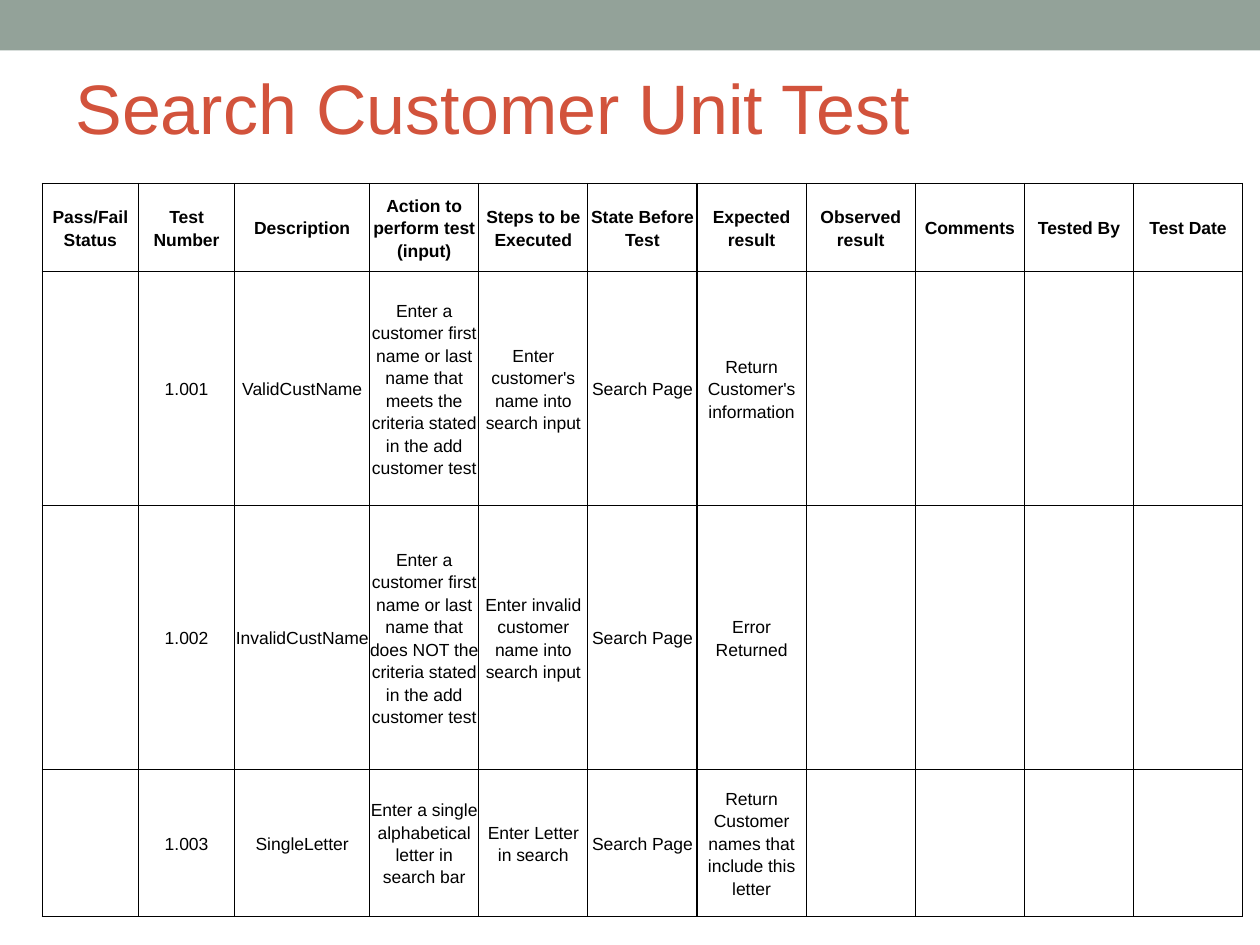
from dataclasses import dataclass

from lxml import etree
from pptx import Presentation
from pptx import util as u
from pptx.dml.color import RGBColor
from pptx.enum import shapes, text
from pptx.oxml import ns


@dataclass(frozen=True)
class Theme:
    font: str = "Arial"
    band: str = "93A299"
    title: str = "D2533C"
    ink: str = "000000"
    title_size: int = 40
    table_size: int = 10
    border: float = 0.75
    spacing: float = 1.15


class SlideBuilder:
    def __init__(self, theme, slide):
        self.theme = theme
        self.slide = slide

    def add_span(self, para, words, size, color, bold=False):
        span = para.add_run()
        span.text = words
        span.font.name = self.theme.font
        span.font.size = u.Pt(size)
        span.font.bold = bold
        span.font.color.rgb = RGBColor.from_string(color)

    def band(self, width, height):
        box = self.slide.shapes.add_shape(
            shapes.MSO_SHAPE.RECTANGLE, 0, 0, width, height)
        box.shadow.inherit = False
        box.fill.solid()
        box.fill.fore_color.rgb = RGBColor.from_string(self.theme.band)
        box.line.fill.background()

    def title(self, words, left, top, width, height):
        box = self.slide.shapes.title
        box.left, box.top, box.width, box.height = left, top, width, height
        frame = box.text_frame
        frame.auto_size = text.MSO_AUTO_SIZE.NONE
        frame.word_wrap = True
        frame.vertical_anchor = text.MSO_ANCHOR.MIDDLE
        frame.margin_left = frame.margin_right = frame.margin_top = u.Cm(0.25)
        frame.margin_bottom = u.Cm(0.56)
        para = frame.paragraphs[0]
        para.alignment = text.PP_ALIGN.LEFT
        self.add_span(para, words, self.theme.title_size, self.theme.title)

    def cell_borders(self, cell):
        properties = cell._tc.get_or_add_tcPr()
        for side in ("lnL", "lnR", "lnT", "lnB"):
            line = etree.SubElement(properties, ns.qn(f"a:{side}"),
                                    w=str(u.Pt(self.theme.border)))
            fill = etree.SubElement(line, ns.qn("a:solidFill"))
            etree.SubElement(fill, ns.qn("a:srgbClr"), val=self.theme.ink)

    def cell(self, cell, words, bold):
        self.cell_borders(cell)
        cell.fill.background()
        cell.margin_left = cell.margin_right = 0
        cell.margin_top = cell.margin_bottom = 0
        cell.vertical_anchor = text.MSO_ANCHOR.MIDDLE
        if words:
            para = cell.text_frame.paragraphs[0]
            para.alignment = text.PP_ALIGN.CENTER
            para.line_spacing = self.theme.spacing
            self.add_span(para, words, self.theme.table_size,
                          self.theme.ink, bold)

    def table(self, rows, left, top, widths, heights):
        table = self.slide.shapes.add_table(
            len(heights), len(widths), left, top,
            sum(widths), sum(heights)).table
        table.first_row = table.horz_banding = False
        for column, width in zip(table.columns, widths):
            column.width = width
        for number, (row, height) in enumerate(zip(table.rows, heights)):
            row.height = height
            padded = rows[number] + [""] * (len(widths) - len(rows[number]))
            for cell, words in zip(row.cells, padded):
                self.cell(cell, words, bold=number == 0)


# Table content; the columns after the expected result are left to fill in
HEADINGS = ["Pass/Fail Status", "Test Number", "Description",
            "Action to perform test (input)", "Steps to be Executed",
            "State Before Test", "Expected result", "Observed result",
            "Comments", "Tested By", "Test Date"]
TESTS = [
    ["", "1.001", "ValidCustName",
     "Enter a customer first name or last name that meets the criteria "
     "stated in the add customer test",
     "Enter customer's name into search input", "Search Page",
     "Return Customer's information"],
    ["", "1.002", "InvalidCustName",
     "Enter a customer first name or last name that does NOT the criteria "
     "stated in the add customer test",
     "Enter invalid customer name into search input", "Search Page",
     "Error Returned"],
    ["", "1.003", "SingleLetter",
     "Enter a single alphabetical letter in search bar",
     "Enter Letter in search", "Search Page",
     "Return Customer names that include this letter"],
]


def main():
    deck = Presentation()
    deck.slide_width, deck.slide_height = u.Cm(25.4), u.Cm(19.05)
    page = SlideBuilder(Theme(), deck.slides.add_slide(deck.slide_layouts[5]))

    # Top band and title
    page.band(deck.slide_width, u.Cm(1.02))
    page.title("Search Customer Unit Test",
               u.Cm(1.27), u.Cm(0.94), u.Cm(22.86), u.Cm(2.74))

    # Test table
    widths = [u.Cm(w) for w in [1.94] * 2 + [2.72] + [2.2] * 8]
    heights = [u.Cm(h) for h in (1.77, 4.72, 5.32, 2.96)]
    page.table([HEADINGS] + TESTS, u.Cm(0.85), u.Cm(3.7), widths, heights)

    deck.save("out.pptx")


if __name__ == "__main__":
    main()
